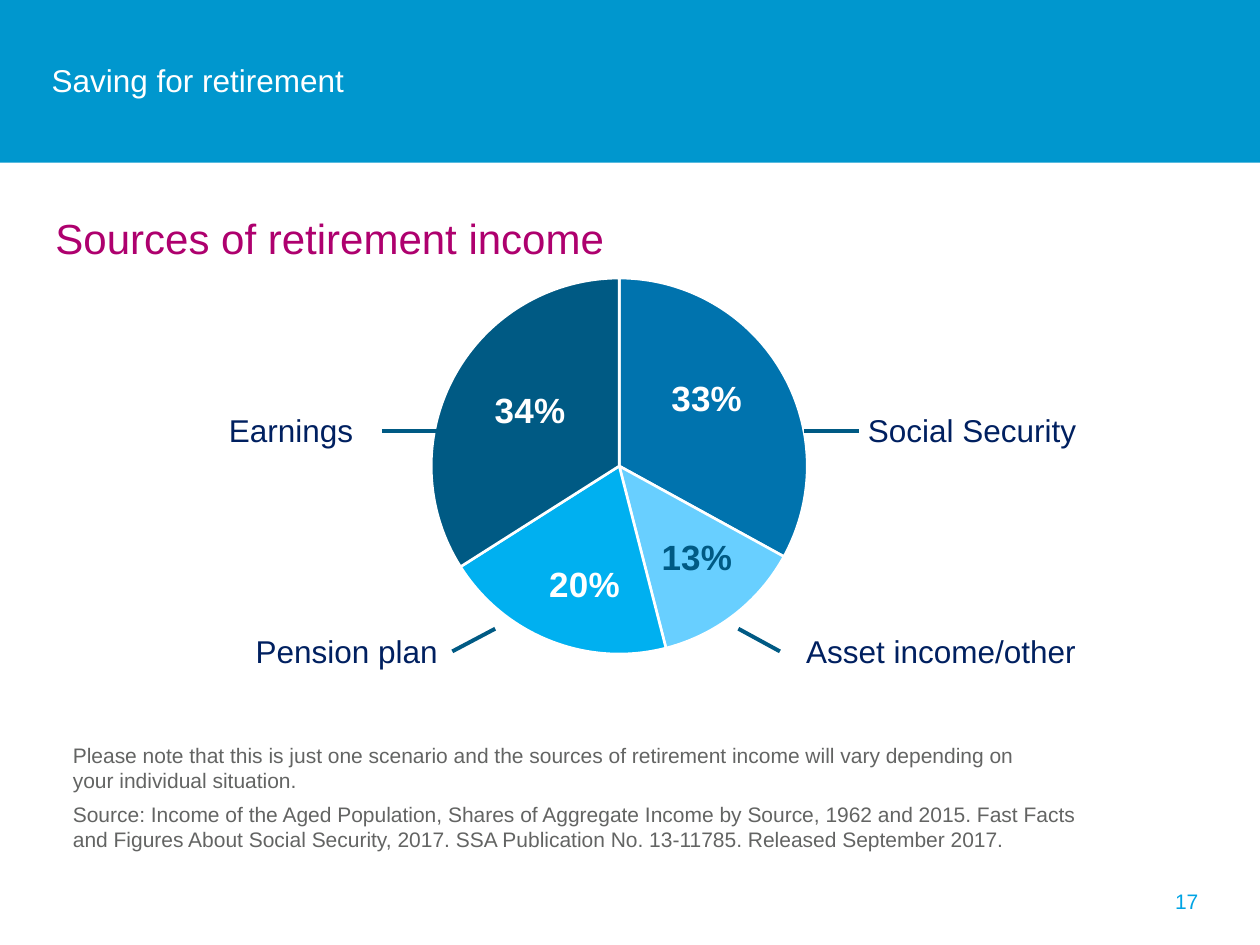
from lxml import etree
from pptx import Presentation
from pptx.chart.data import CategoryChartData
from pptx.dml.color import RGBColor
from pptx.enum.chart import XL_CHART_TYPE, XL_LABEL_POSITION
from pptx.enum.shapes import MSO_CONNECTOR, MSO_SHAPE
from pptx.enum.text import MSO_ANCHOR, MSO_AUTO_SIZE, PP_ALIGN
from pptx.oxml import parse_xml
from pptx.oxml.ns import nsdecls, qn
from pptx.util import Inches, Pt

LEFT, CENTER, RIGHT = PP_ALIGN.LEFT, PP_ALIGN.CENTER, PP_ALIGN.RIGHT
TOP, MIDDLE = MSO_ANCHOR.TOP, MSO_ANCHOR.MIDDLE

FONT = "Arial"
WHITE = RGBColor(0xFF, 0xFF, 0xFF)
BAND_BLUE = RGBColor(0x00, 0x97, 0xCE)
MAGENTA = RGBColor(0xAE, 0x00, 0x6E)
GREY = RGBColor(0x63, 0x64, 0x63)
NUMBER_BLUE = RGBColor(0x00, 0xA4, 0xE4)
NAVY = RGBColor(0x00, 0x20, 0x60)
DEEP_BLUE = RGBColor(0x00, 0x5A, 0x84)
MID_BLUE = RGBColor(0x00, 0x73, 0xAE)
PALE_BLUE = RGBColor(0x68, 0xCF, 0xFF)
BRIGHT_BLUE = RGBColor(0x00, 0xB0, 0xF0)

presentation = Presentation()
presentation.slide_width = Inches(10)
presentation.slide_height = Inches(7.5)
slide = presentation.slides.add_slide(presentation.slide_layouts[1])
shapes = slide.shapes

# Grid of 100 columns by 75 rows
COLUMN = presentation.slide_width / 100
ROW = presentation.slide_height / 75


def grid(*numbers):
    """Turn alternating column and row counts into lengths."""
    return [int(number * (ROW if index % 2 else COLUMN))
            for index, number in enumerate(numbers)]


def write(shape, text, size, color, align=LEFT, anchor=TOP, wrap=True, inset=0.1):
    frame = shape.text_frame
    frame.text = text
    frame.word_wrap = wrap
    frame.auto_size = MSO_AUTO_SIZE.NONE
    frame.vertical_anchor = anchor
    frame.margin_left = Inches(inset)
    frame.margin_right = Inches(0.1)
    frame.margin_top = frame.margin_bottom = Inches(0.05)
    paragraph = frame.paragraphs[0]
    paragraph.alignment = align
    paragraph.space_before = Pt(0)
    if shape.is_placeholder:
        properties = paragraph._p.get_or_add_pPr()
        properties.set("marL", "0")
        properties.set("indent", "0")
        etree.SubElement(properties, qn("a:buNone"))
    font = paragraph.runs[0].font
    font.name, font.size, font.color.rgb = FONT, Pt(size), color


# Header band, behind the title
band = shapes.add_shape(MSO_SHAPE.RECTANGLE, *grid(0, 0, 100, 12.9))
band.shadow.inherit = False
band.fill.solid()
band.fill.fore_color.rgb = BAND_BLUE
band.line.fill.background()
shapes._spTree.insert(2, band._element)

title, body = shapes.title, slide.placeholders[1]
title.left, title.top, title.width, title.height = grid(4.1, 3.9, 92.1, 4.9)
write(title, "Saving for retirement", 18, WHITE, anchor=MIDDLE, inset=0)
body.left, body.top, body.width, body.height = grid(4.4, 16.4, 91.6, 49.7)
write(body, "Sources of retirement income", 24, MAGENTA, inset=0)

notes = [
    (58.4, 80.3, "Please note that this is just one scenario and the sources of retirement "
     "income will vary depending on your individual situation."),
    (63.1, 84.8, "Source: Income of the Aged Population, Shares of Aggregate Income by Source, "
     "1962 and 2015. Fast Facts and Figures About Social Security, 2017. "
     "SSA Publication No. 13-11785. Released September 2017."),
]
for top, width, text in notes:
    write(shapes.add_textbox(*grid(4.8, top, width, 5.1)), text, 12, GREY)

write(shapes.add_textbox(*grid(72.8, 69.5, 23.3, 4)), "17", 12, NUMBER_BLUE,
      align=RIGHT, anchor=MIDDLE)

# Pie: value, slice colour, label colour, label shift as shares of the chart
slices = [
    (0.33, MID_BLUE, WHITE, 0.01, -0.04),
    (0.13, PALE_BLUE, DEEP_BLUE, 0.03, 0.04),
    (0.20, BRIGHT_BLUE, WHITE, 0, 0.07),
    (0.34, DEEP_BLUE, WHITE, -0.01, -0.02),
]
chart_data = CategoryChartData(number_format="0%")
chart_data.categories = ["1", "2", "3", "4"]
chart_data.add_series("Series 1", [item[0] for item in slices])
chart = shapes.add_chart(XL_CHART_TYPE.PIE, *grid(22.5, 20.3, 53.3, 36.3), chart_data).chart
chart.has_legend = False
chart.has_title = False
chart.font.name, chart.font.size = FONT, Pt(18)

plot = chart.plots[0]
plot.vary_by_categories = True
series = plot.series[0]
labels = series.data_labels
labels.show_value = True
labels.show_percentage = False
labels.number_format, labels.number_format_is_linked = "0%", False
for index, (value, color, label_color, shift_x, shift_y) in enumerate(slices):
    point = series.points[index]
    point.format.fill.solid()
    point.format.fill.fore_color.rgb = color
    point.format.line.color.rgb = WHITE
    point.format.line.width = Pt(1.5)
    label = point.data_label
    label.position = XL_LABEL_POSITION.CENTER
    font = label.font
    font.name, font.size, font.bold, font.color.rgb = FONT, Pt(20), True, label_color
    label_xml = series._element.xpath(f"c:dLbls/c:dLbl[c:idx/@val='{index}']")[0]
    label_xml.insert(1, parse_xml(
        f'<c:layout {nsdecls("c")}><c:manualLayout><c:x val="{shift_x}"/>'
        f'<c:y val="{shift_y}"/></c:manualLayout></c:layout>'))

plot_area = chart._chartSpace.chart.plotArea
for layout in plot_area.findall(qn("c:layout")):
    plot_area.remove(layout)
plot_area.insert(0, parse_xml(
    f'<c:layout {nsdecls("c")}><c:manualLayout><c:layoutTarget val="inner"/>'
    '<c:xMode val="edge"/><c:yMode val="edge"/><c:x val="0.22"/><c:y val="0.04"/>'
    '<c:w val="0.56"/><c:h val="0.84"/></c:manualLayout></c:layout>'))

# Slice names and their leader lines
names = [
    ("Social Security", 67.9, 32.1, 18.7, LEFT, (63.8, 34.2, 68.2, 34.2)),
    ("Asset income/other", 63, 49.7, 23.6, LEFT, (58.6, 49.9, 61.9, 51.7)),
    ("Pension plan", 19.3, 49.7, 16.6, LEFT, (39.3, 49.9, 35.9, 51.7)),
    ("Earnings", 17.1, 32.1, 12, CENTER, (30.3, 34.2, 34.8, 34.2)),
]
for text, left, top, width, align, ends in names:
    write(shapes.add_textbox(*grid(left, top, width, 4)), text, 18, NAVY,
          align=align, wrap=False)
    leader = shapes.add_connector(MSO_CONNECTOR.STRAIGHT, *grid(*ends))
    leader.line.color.rgb = DEEP_BLUE
    leader.line.width = Pt(2.25)
    etree.SubElement(leader._element.spPr, qn("a:effectLst"))

presentation.save("out.pptx")
